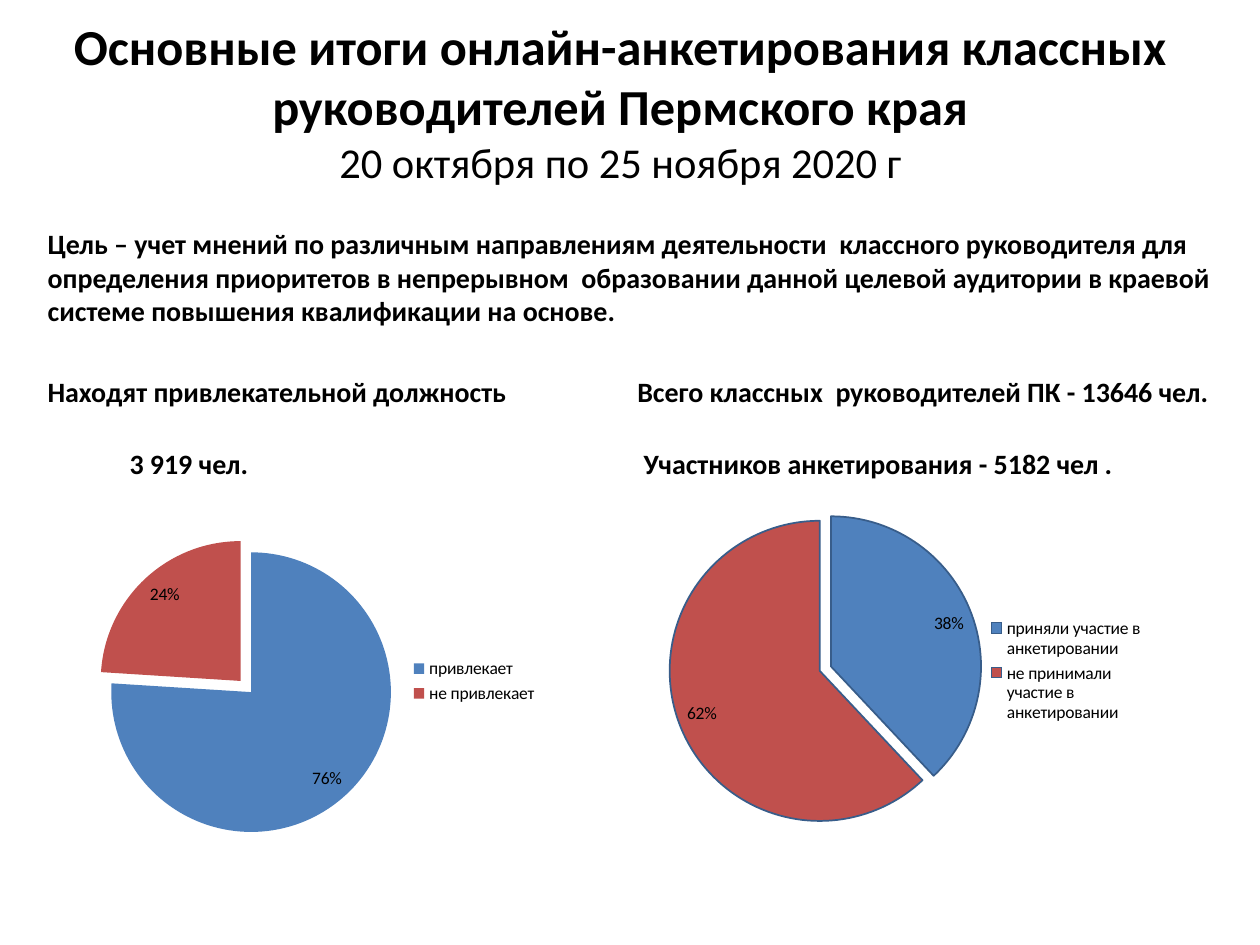
from lxml.etree import SubElement
from pptx import Presentation
from pptx.chart.data import CategoryChartData
from pptx.dml.color import RGBColor
from pptx.enum.chart import XL_CHART_TYPE, XL_LABEL_POSITION, XL_LEGEND_POSITION
from pptx.enum.text import MSO_ANCHOR, MSO_AUTO_SIZE, PP_ALIGN
from pptx.oxml.ns import qn
from pptx.util import Inches, Pt

HUES = {"text": "000000", "yes": "4F81BD", "no": "C0504D", "edge": "385D8A"}
FONT = "Calibri"
COLS, ROWS = 100, 75


def hue(name):
    return RGBColor.from_string(HUES[name])


def write(par, text, size=16, bold=True, align=PP_ALIGN.LEFT, gap=0, indent=0):
    run = par.add_run()
    run.text = text
    font = run.font
    font.name, font.size, font.bold = FONT, Pt(size), bold
    font.color.rgb = hue("text")
    par.alignment, par.space_before = align, Pt(gap)
    if indent:
        props = par._p.get_or_add_pPr()
        props.set("marL", str(Inches(indent)))
        props.set("indent", "0")


class Deck:
    def __init__(self):
        self.file = Presentation()
        self.file.slide_width, self.file.slide_height = Inches(10), Inches(7.5)
        self.slide = self.file.slides.add_slide(self.file.slide_layouts[5])

    def area(self, col, row, wide, high):
        """Turn grid columns and rows into slide lengths."""
        x, y = self.file.slide_width / COLS, self.file.slide_height / ROWS
        return [int(n) for n in (col * x, row * y, wide * x, high * y)]

    def fill(self, shape, lines, anchor):
        frame = shape.text_frame
        frame.word_wrap = True
        frame.auto_size = MSO_AUTO_SIZE.NONE
        frame.vertical_anchor = anchor
        for i, (text, form) in enumerate(lines):
            par = frame.add_paragraph() if i else frame.paragraphs[0]
            write(par, text, **form)

    def title(self, box, lines):
        shape = self.slide.shapes.title
        shape.left, shape.top, shape.width, shape.height = self.area(*box)
        self.fill(shape, lines, MSO_ANCHOR.MIDDLE)

    def text(self, box, lines):
        shape = self.slide.shapes.add_textbox(*self.area(*box))
        self.fill(shape, lines, MSO_ANCHOR.TOP)

    def pie(self, box, parts, burst, edge=None):
        data = CategoryChartData(number_format="0%")
        data.categories = list(parts)
        data.add_series("Series 1", list(parts.values()))
        chart = self.slide.shapes.add_chart(
            XL_CHART_TYPE.PIE, *self.area(*box), data).chart
        chart.has_title = False
        chart.font.name, chart.font.size = FONT, Pt(10)
        chart.font.color.rgb = hue("text")
        chart.has_legend = True
        chart.legend.position = XL_LEGEND_POSITION.RIGHT
        chart.legend.include_in_layout = False

        # Slices: the first one is pulled out
        plot = chart.plots[0]
        plot.vary_by_categories = True
        for i, name in enumerate(("yes", "no")):
            form = plot.series[0].points[i].format
            form.fill.solid()
            form.fill.fore_color.rgb = hue(name)
            if edge:
                form.line.color.rgb = hue(edge)
                form.line.width = Pt(1)
            else:
                form.line.fill.background()
        point = plot.series[0]._element.find(qn("c:dPt"))
        pull = point.makeelement(qn("c:explosion"), {"val": str(burst)})
        point.find(qn("c:spPr")).addprevious(pull)

        # Labels
        plot.has_data_labels = True
        labels = plot.data_labels
        labels.show_value, labels.show_percentage = True, False
        labels.number_format, labels.number_format_is_linked = "0%", False
        labels.position = XL_LABEL_POSITION.INSIDE_END

        # Plot area as shares of the chart
        zone = chart._chartSpace.chart.plotArea
        for old in zone.findall(qn("c:layout")):
            zone.remove(old)
        layout = zone.makeelement(qn("c:layout"), {})
        zone.insert(0, layout)
        manual = SubElement(layout, qn("c:manualLayout"))
        for tag, val in (("layoutTarget", "inner"), ("xMode", "edge"),
                         ("yMode", "edge"), ("x", 0.035), ("y", 0.14),
                         ("w", 0.6), ("h", 0.72)):
            SubElement(manual, qn(f"c:{tag}"), val=str(val))


def main():
    deck = Deck()

    # Heading
    mid = PP_ALIGN.CENTER
    deck.title((2, 0.6, 94.5, 14.8), [
        ("Основные итоги онлайн-анкетирования классных руководителей "
         "Пермского края", dict(size=28.8, align=mid)),
        ("20 октября по 25 ноября 2020 г",
         dict(size=24.3, bold=False, align=mid)),
    ])

    # Goal
    deck.text((2.8, 17.5, 94.5, 10), [
        ("Цель – учет мнений по различным направлениям деятельности  "
         "классного руководителя для определения приоритетов в непрерывном  "
         "образовании данной целевой аудитории в краевой системе повышения "
         "квалификации на основе.", {}),
    ])

    # Chart captions
    deck.text((2.8, 29.2, 45, 9.5), [
        ("Находят привлекательной должность", {}),
        ("3 919 чел.", dict(gap=22, indent=0.65)),
    ])
    deck.text((49.6, 29.2, 49, 9.5), [
        ("Всего классных  руководителей ПК - 13646 чел.", {}),
        ("Участников анкетирования - 5182 чел .", dict(gap=22, indent=0.05)),
    ])

    # Charts
    deck.pie((51.6, 36.7, 40.2, 33.1), {
        "приняли участие в анкетировании": 0.38,
        "не принимали участие в анкетировании": 0.62}, 8, "edge")
    deck.pie((6.7, 38.3, 37, 31.5), {
        "привлекает": 0.76, "не привлекает": 0.24}, 11)

    deck.file.save("out.pptx")


if __name__ == "__main__":
    main()
